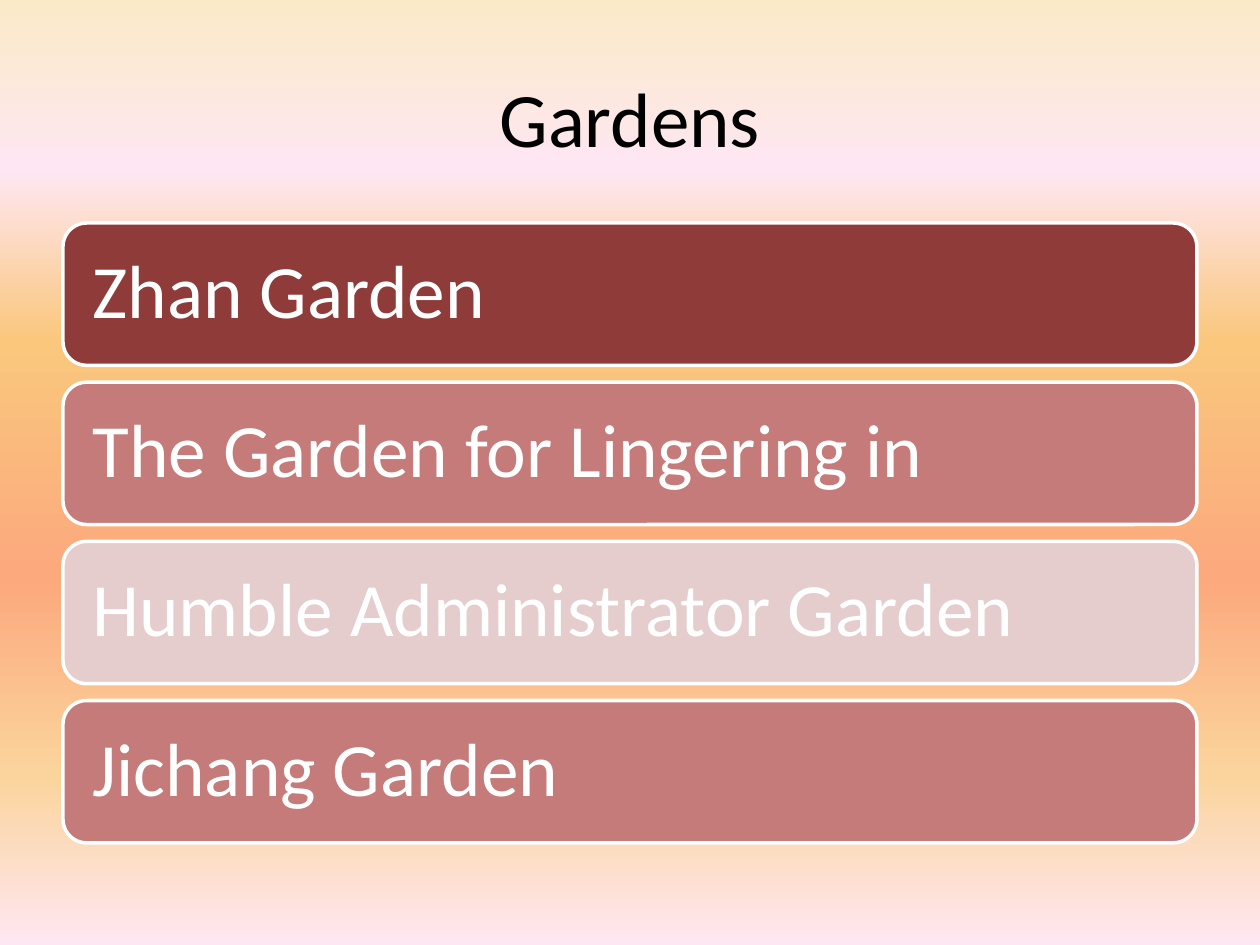
import pptx
import pptx.dml.color
import pptx.enum.shapes
import pptx.enum.text
import pptx.oxml
import pptx.oxml.ns
import pptx.util
from pptx.util import Inches

RGBColor = pptx.dml.color.RGBColor
BLACK = RGBColor(0x00, 0x00, 0x00)
WHITE = RGBColor(0xFF, 0xFF, 0xFF)
DARK_RED = RGBColor(0x8E, 0x3B, 0x39)
ROSE = RGBColor(0xC4, 0x7B, 0x79)
PALE_ROSE = RGBColor(0xE6, 0xCD, 0xCD)
PINK = RGBColor(0xFE, 0xE7, 0xF2)

BACKGROUND_STOPS = [
    (0, RGBColor(0xFB, 0xEA, 0xC7)),
    (18, PINK),
    (36, RGBColor(0xFA, 0xC7, 0x7D)),
    (61, RGBColor(0xFB, 0xA9, 0x7D)),
    (82, RGBColor(0xFB, 0xD4, 0x9C)),
    (100, PINK),
]
GARDENS = [
    ("Zhan Garden", DARK_RED),
    ("The Garden for Lingering in", ROSE),
    ("Humble Administrator Garden", PALE_ROSE),
    ("Jichang Garden", ROSE),
]
FIRST_TOP, LAST_TOP = 1.77, 5.56


class SlideBuilder:
    font_name = "Calibri"
    bar_inset = Inches(0.18)

    def __init__(self, slide):
        self.slide = slide

    def background(self, stops):
        fill = self.slide.background.fill
        fill.gradient()
        fill.gradient_angle = 270
        stop_list = self.slide.element.find(".//" + pptx.oxml.ns.qn("a:gsLst"))
        for stop in list(stop_list):
            stop_list.remove(stop)
        for percent, color in stops:
            stop_list.append(pptx.oxml.parse_xml(
                f'<a:gs {pptx.oxml.ns.nsdecls("a")} pos="{percent * 1000}">'
                f'<a:srgbClr val="{color}"/></a:gs>'))

    def text(self, shape, text, size, color, alignment, line_spacing=1.0):
        frame = shape.text_frame
        frame.text = text
        frame.word_wrap = True
        frame.vertical_anchor = pptx.enum.text.MSO_ANCHOR.MIDDLE
        paragraph = frame.paragraphs[0]
        paragraph.alignment = alignment
        paragraph.line_spacing = line_spacing
        font = paragraph.runs[0].font
        font.color.rgb = color
        formats = {"name": self.font_name, "size": pptx.util.Pt(size)}
        for name, value in formats.items():
            setattr(font, name, value)

    def title(self, text):
        title = self.slide.shapes.title
        place = {"left": Inches(0.5), "top": Inches(0.3),
                 "width": Inches(9), "height": Inches(1.25)}
        for name, value in place.items():
            setattr(title, name, value)
        self.text(title, text, 44, BLACK, pptx.enum.text.PP_ALIGN.CENTER)

    def bar(self, text, top, color):
        bar = self.slide.shapes.add_shape(
            pptx.enum.shapes.MSO_SHAPE.ROUNDED_RECTANGLE,
            Inches(0.5), Inches(top), Inches(9), Inches(1.13))
        bar.shadow.inherit = False
        bar.fill.solid()
        bar.fill.fore_color.rgb = color
        bar.line.color.rgb = WHITE
        bar.line.width = pptx.util.Pt(2)
        for side in ("left", "top", "right", "bottom"):
            setattr(bar.text_frame, f"margin_{side}", self.bar_inset)
        self.text(bar, text, 43, WHITE, pptx.enum.text.PP_ALIGN.LEFT, 0.9)


def main():
    presentation = pptx.Presentation()
    presentation.slide_width = Inches(10)
    presentation.slide_height = Inches(7.5)
    title_only = presentation.slide_layouts[5]
    builder = SlideBuilder(presentation.slides.add_slide(title_only))

    builder.background(BACKGROUND_STOPS)
    builder.title("Gardens")
    pitch = (LAST_TOP - FIRST_TOP) / (len(GARDENS) - 1)
    for index, (garden, color) in enumerate(GARDENS):
        builder.bar(garden, FIRST_TOP + index * pitch, color)

    presentation.save("out.pptx")


if __name__ == "__main__":
    main()
